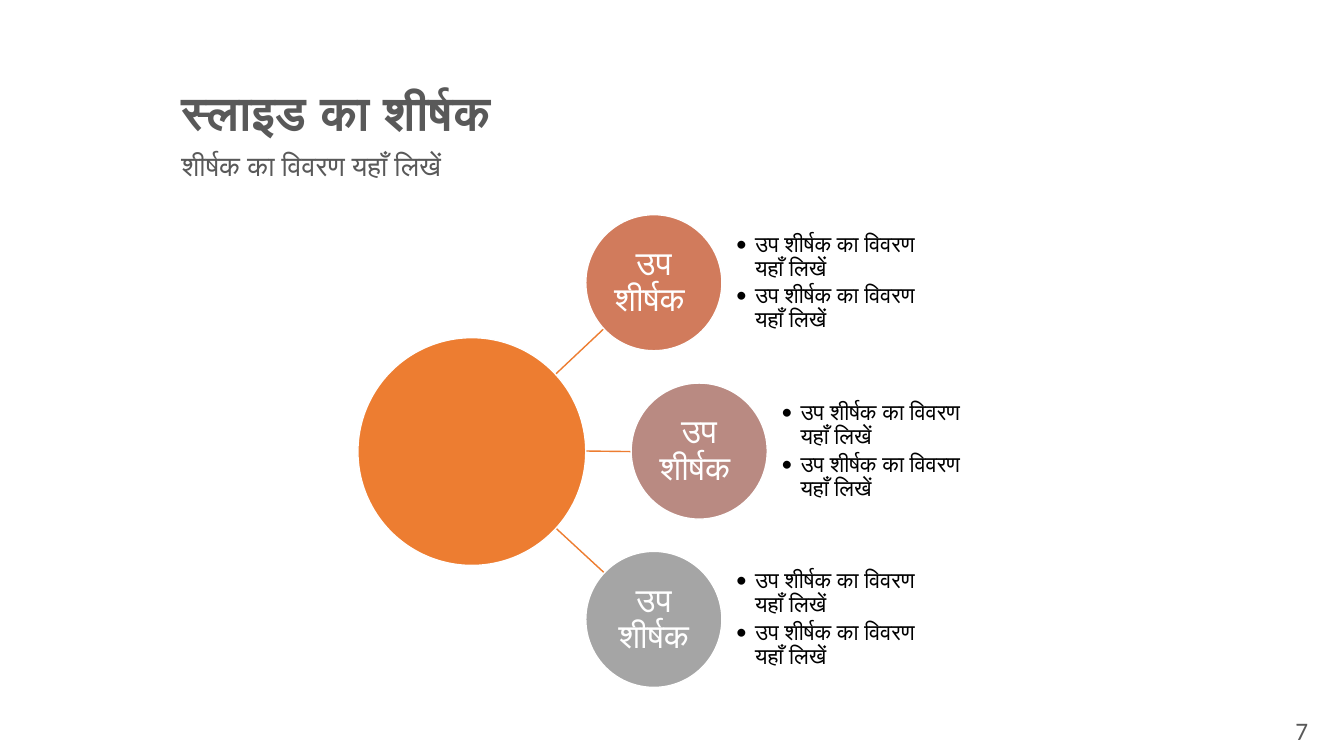
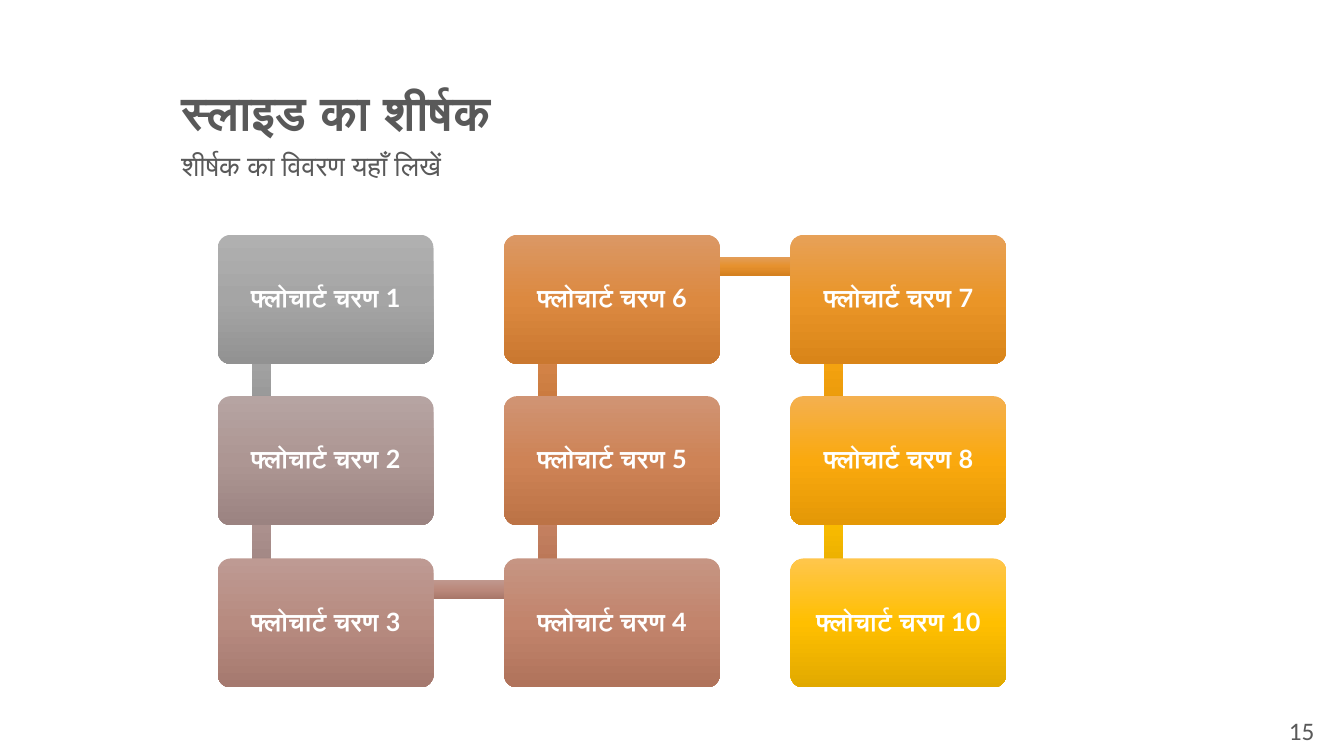
from colorsys import hls_to_rgb
from copy import deepcopy

from pptx import Presentation
from pptx.dml.color import RGBColor
from pptx.enum.shapes import MSO_SHAPE
from pptx.enum.text import MSO_ANCHOR, PP_ALIGN
from pptx.oxml.ns import qn
from pptx.util import Inches, Pt

COLORS = {
    "white": "FFFFFF", "black": "000000", "gray": "595959", "orange": "ED7D31",
    "clay": "D17B5C", "rose": "B98A82", "silver": "A5A5A5",
}
TITLE = "स्लाइड का शीर्षक"
SUBTITLE = "शीर्षक का विवरण यहाँ लिखें"

DETAILS = ["उप शीर्षक का विवरण यहाँ लिखें"] * 2
# label, fill, left, details, spoke start, spoke end
BRANCHES = [
    ("उप शीर्षक ", "clay", 5.81, DETAILS, (5.47, 3.75), (5.99, 3.26)),
    ("उप शीर्षक ", "rose", 6.26, DETAILS, (5.47, 4.47), (6.26, 4.48)),
    ("उप शीर्षक", "silver", 5.81, DETAILS, (5.47, 5.2), (5.99, 5.68)),
]
HUB_LEFT, HUB_TOP, HUB_SIZE = 3.55, 3.35, 2.26
BRANCH_TOP, BRANCH_SIZE, BRANCH_STEP = 2.13, 1.35, 1.67

STEPS = [f"फ्लोचार्ट चरण {number}" for number in (1, 2, 3, 4, 5, 6, 7, 8, 10)]
ROW_TOPS = [2.33, 3.93, 5.54]
GRID_LEFT, COLUMN_STEP = 2.16, 2.84
STEP_WIDTH, STEP_HEIGHT, BEAM = 2.14, 1.28, 0.19


def rgb(name):
    return RGBColor.from_string(COLORS[name])


def style(para, size, color, font="Calibri", bold=False, align=None, spacing=0.9):
    para.line_spacing = spacing
    para.alignment = align
    para.font.size = Pt(size)
    for span in para.runs:
        span.font.name = font
        span.font.size = Pt(size)
        span.font.bold = bold
        span.font.color.rgb = rgb(color)


def set_frame(shape, inset, anchor=MSO_ANCHOR.MIDDLE):
    frame = shape.text_frame
    frame.word_wrap = True
    frame.vertical_anchor = anchor
    frame.margin_left = frame.margin_right = Inches(inset)
    frame.margin_top = frame.margin_bottom = Inches(min(inset, 0.05))
    return frame


def add_text(page, text, left, top, width, height, size, **options):
    box = page.shapes.add_textbox(*map(Inches, (left, top, width, height)))
    frame = set_frame(box, 0.1, MSO_ANCHOR.TOP)
    frame.text = text
    style(frame.paragraphs[0], size, "gray", **options)


def add_page(deck, number):
    page = deck.slides.add_slide(deck.slide_layouts[6])
    add_text(page, TITLE, 1.7, 0.84, 9.61, 0.55, 34, bold=True)
    add_text(page, SUBTITLE, 1.7, 1.46, 9.61, 0.63, 20)
    add_text(page, str(number), 12.49, 7.05, 0.84, 0.45, 18,
             align=PP_ALIGN.CENTER, spacing=1.0)
    return page


def add_shape(page, kind, left, top, width, height):
    shape = page.shapes.add_shape(kind, *map(Inches, (left, top, width, height)))
    shape.shadow.inherit = False
    shape.line.fill.background()
    return shape


def add_circle(page, left, top, size, color):
    circle = add_shape(page, MSO_SHAPE.OVAL, left, top, size, size)
    circle.fill.solid()
    circle.fill.fore_color.rgb = rgb(color)
    circle.line.color.rgb = rgb("white")
    circle.line.width = Pt(1)
    return circle


def add_spoke(page, start, end):
    builder = page.shapes.build_freeform(*map(Inches, start))
    builder.add_line_segments([tuple(map(Inches, end))], close=False)
    spoke = builder.convert_to_shape()
    spoke.shadow.inherit = False
    spoke.fill.background()
    spoke.line.color.rgb = rgb("orange")
    spoke.line.width = Pt(1)


def add_bullets(page, lines, left, top):
    box = page.shapes.add_textbox(*map(Inches, (left, top, 2.03, BRANCH_SIZE)))
    frame = set_frame(box, 0)
    frame.text = "\n".join(lines)
    for para in frame.paragraphs:
        para.level = 1
        properties = para._p.get_or_add_pPr()
        properties.set("marL", str(Inches(0.19)))
        properties.set("indent", str(-Inches(0.19)))
        for tag, attributes in (("a:buFont", {"typeface": "Calibri"}),
                                ("a:buChar", {"char": "•"})):
            properties.append(properties.makeelement(qn(tag), attributes))
        style(para, 16, "black")
        para.space_after = Pt(2.4)


def build_branches(deck):
    page = add_page(deck, 7)
    for *_, start, end in BRANCHES:
        add_spoke(page, start, end)
    add_circle(page, HUB_LEFT, HUB_TOP, HUB_SIZE, "orange")
    for index, (label, color, left, details, *_) in enumerate(BRANCHES):
        top = BRANCH_TOP + index * BRANCH_STEP
        frame = set_frame(add_circle(page, left, top, BRANCH_SIZE, color), 0.02)
        frame.text = label
        style(frame.paragraphs[0], 24, "white", align=PP_ALIGN.CENTER)
        add_bullets(page, details, left + BRANCH_SIZE + 0.14, top)


def shade(position, light, saturation, scale, lift):
    """Colour at position 0 (gray) to 1 (gold), scaled and lifted in linear light."""
    channels = hls_to_rgb(position / 8, (0.647 - 0.147 * position) * light,
                          min(1, position * saturation))
    linear = [channel ** 2.2 * scale + lift for channel in channels]
    return RGBColor(*[round(255 * min(1, value) ** (1 / 2.2)) for value in linear])


def fill_gradient(shape, position):
    shape.fill.gradient()
    shape.fill.gradient_angle = 270
    stop_list = shape._element.spPr.find(qn("a:gradFill")).find(qn("a:gsLst"))
    stop_list.append(deepcopy(stop_list[-1]))
    tones = [(1.02, 1.03, 0.93, 0.07), (1, 1.1, 1, 0), (0.99, 1.2, 0.78, 0)]
    for index, (stop, tone) in enumerate(zip(shape.fill.gradient_stops, tones)):
        stop.position = index / 2
        stop.color.rgb = shade(position, *tone)


def step_corner(index):
    """Top left of a step; the columns run down and up in turn."""
    column, row = divmod(index, len(ROW_TOPS))
    if column % 2:
        row = len(ROW_TOPS) - 1 - row
    return GRID_LEFT + column * COLUMN_STEP, ROW_TOPS[row]


def add_beam(page, start, end, position):
    left, top = min(start[0], end[0]), min(start[1], end[1])
    width = abs(end[0] - start[0]) or BEAM
    height = abs(end[1] - start[1]) or BEAM
    offset_x = 0.43 - (BEAM / 2 if width == BEAM else 0)
    offset_y = 0.31 - (BEAM / 2 if height == BEAM else 0)
    beam = add_shape(page, MSO_SHAPE.RECTANGLE, left + offset_x, top + offset_y,
                     width, height)
    fill_gradient(beam, position)


def build_flowchart(deck):
    page = add_page(deck, 15)
    last = len(STEPS) - 1
    corners = [step_corner(index) for index in range(len(STEPS))]
    for index, (start, end) in enumerate(zip(corners, corners[1:])):
        add_beam(page, start, end, index / (last - 1))
    for index, (label, corner) in enumerate(zip(STEPS, corners)):
        step = add_shape(page, MSO_SHAPE.ROUNDED_RECTANGLE, *corner,
                         STEP_WIDTH, STEP_HEIGHT)
        step.adjustments[0] = 0.1
        fill_gradient(step, index / last)
        frame = set_frame(step, 0.1)
        frame.text = label
        style(frame.paragraphs[0], 18, "white", "Lato", True, PP_ALIGN.CENTER)


def main():
    deck = Presentation()
    deck.slide_width, deck.slide_height = Inches(13.33), Inches(7.5)
    build_branches(deck)
    build_flowchart(deck)
    deck.save("out.pptx")


if __name__ == "__main__":
    main()
